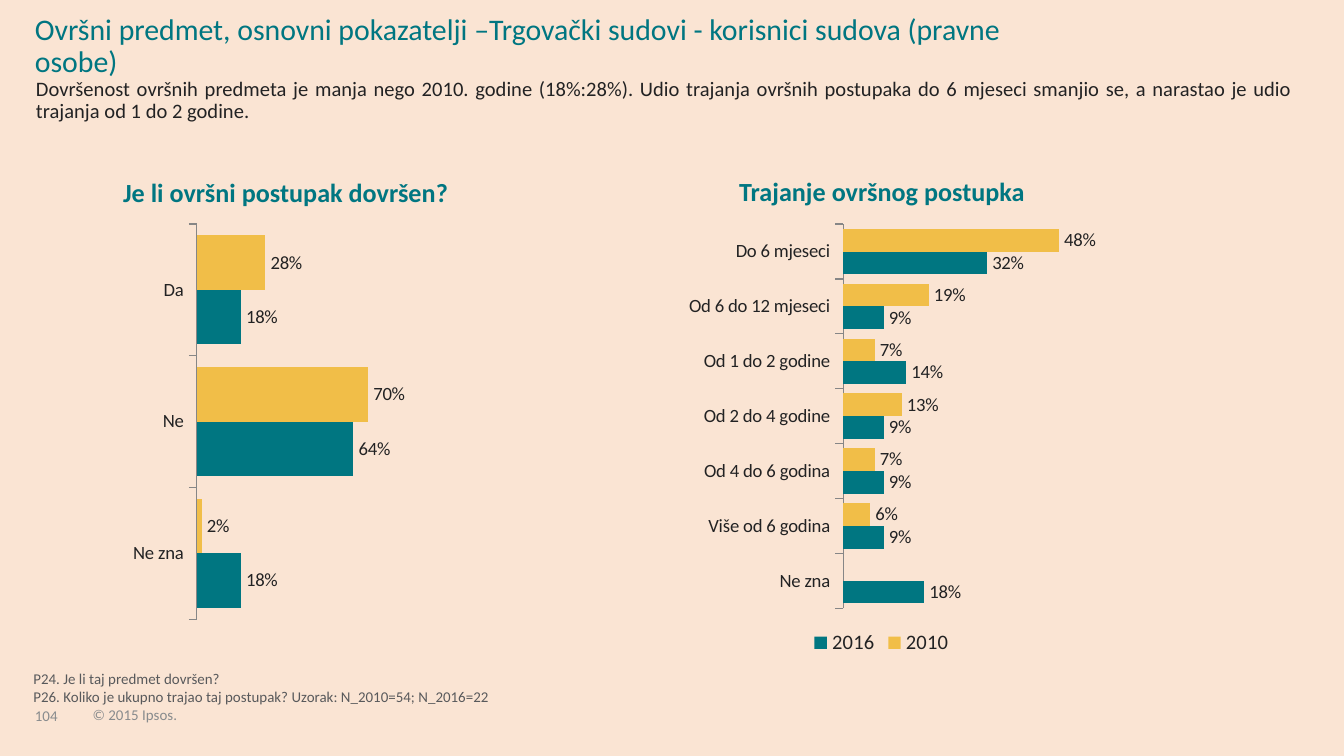
from lxml.etree import SubElement
from pptx import Presentation
from pptx.chart.data import CategoryChartData
from pptx.dml.color import RGBColor
from pptx.enum.chart import XL_CHART_TYPE as ChartType
from pptx.enum.chart import XL_LABEL_POSITION as LabelPos
from pptx.enum.chart import XL_LEGEND_POSITION as LegendPos
from pptx.enum.chart import XL_TICK_LABEL_POSITION as TickLabelPos
from pptx.enum.chart import XL_TICK_MARK as TickMark
from pptx.enum.text import MSO_ANCHOR as Anchor
from pptx.enum.text import MSO_AUTO_SIZE as AutoSize
from pptx.enum.text import PP_ALIGN as Align
from pptx.oxml.ns import qn
from pptx.util import Cm, Pt

FONT = "Calibri"
PEACH = RGBColor(0xFA, 0xE4, 0xD3)
TEAL = RGBColor(0x00, 0x76, 0x81)
YELLOW = RGBColor(0xF1, 0xBE, 0x48)
INK = RGBColor(0x22, 0x22, 0x23)
NOTE_GREY = RGBColor(0x58, 0x59, 0x5B)
FOOTER_GREY = RGBColor(0x88, 0x8B, 0x8D)
AXIS_GREY = RGBColor(0x86, 0x86, 0x86)


def place(shape, left, top, width, height):
    shape.left, shape.top = Cm(left), Cm(top)
    shape.width, shape.height = Cm(width), Cm(height)


def write(shape, lines, size, color, align=Align.LEFT, spacing=1.0,
          anchor=Anchor.TOP, bold=False, insets=(0, 0), wrap=True):
    """Fill a shape with unbulleted paragraphs in one style."""
    frame = shape.text_frame
    frame.auto_size = AutoSize.NONE
    frame.word_wrap = wrap
    frame.vertical_anchor = anchor
    frame.margin_left = frame.margin_right = Cm(insets[0])
    frame.margin_top = frame.margin_bottom = Cm(insets[1])
    for index, line in enumerate(lines):
        para = frame.add_paragraph() if index else frame.paragraphs[0]
        para.alignment = align
        para.line_spacing = spacing
        para.space_before = Pt(0)
        props = para._p.get_or_add_pPr()
        props.set("marL", "0")
        props.set("indent", "0")
        SubElement(props, qn("a:buNone"))
        run = para.add_run()
        run.text = line
        run.font.name = FONT
        run.font.size = Pt(size)
        run.font.bold = bold
        run.font.color.rgb = color


def add_label(slide, box, lines, size, color, **style):
    label = slide.shapes.add_textbox(*map(Cm, box))
    write(label, lines, size, color, **style)


def fix_plot_area(chart, x, y, width, height):
    """Set the inner plot area as fractions of the chart."""
    plot_area = chart._chartSpace.chart.plotArea
    for old in plot_area.findall(qn("c:layout")):
        plot_area.remove(old)
    layout = SubElement(plot_area, qn("c:layout"))
    plot_area.insert(0, layout)
    manual = SubElement(layout, qn("c:manualLayout"))
    settings = {"layoutTarget": "inner", "xMode": "edge", "yMode": "edge",
                "x": x, "y": y, "w": width, "h": height}
    for tag, value in settings.items():
        SubElement(manual, qn(f"c:{tag}")).set("val", str(value))


def add_bar_chart(slide, box, answers, shares, maximum, plot_area, legend=False):
    """Compare the answers of 2010 and 2016."""
    data = CategoryChartData(number_format="0%")
    data.categories = answers
    for year, values in shares.items():
        data.add_series(year, values)
    chart = slide.shapes.add_chart(
        ChartType.BAR_CLUSTERED, *map(Cm, box), data).chart
    chart.has_title = False
    chart.font.name = FONT
    chart.font.size = Pt(10)
    chart.font.color.rgb = INK

    # Axes
    answer_axis, share_axis = chart.category_axis, chart.value_axis
    answer_axis.reverse_order = True
    answer_axis.major_tick_mark = TickMark.OUTSIDE
    answer_axis.tick_label_position = TickLabelPos.LOW
    answer_axis.has_major_gridlines = False
    answer_axis.format.line.color.rgb = AXIS_GREY
    share_axis.minimum_scale = 0
    share_axis.maximum_scale = maximum
    share_axis.has_major_gridlines = False
    share_axis.visible = False

    # Bars and their labels
    plot = chart.plots[0]
    plot.gap_width = 42
    plot.overlap = 0
    plot.vary_by_categories = False
    for series, color in zip(plot.series, (YELLOW, TEAL)):
        series.format.fill.solid()
        series.format.fill.fore_color.rgb = color
        series.invert_if_negative = False
        labels = series.data_labels
        labels.show_value = True
        labels.number_format = "0%"
        labels.number_format_is_linked = False
        labels.position = LabelPos.OUTSIDE_END

    chart.has_legend = legend
    if legend:
        chart.legend.position = LegendPos.BOTTOM
        chart.legend.include_in_layout = False
        chart.legend.font.size = Pt(11)
        chart.legend.font.name = FONT
        chart.legend.font.color.rgb = INK
    fix_plot_area(chart, *plot_area)


def main():
    prs = Presentation()
    prs.slide_width, prs.slide_height = Cm(25.4), Cm(14.28)
    slide = prs.slides.add_slide(prs.slide_layouts[1])
    slide.background.fill.solid()
    slide.background.fill.fore_color.rgb = PEACH

    # Footer
    add_label(slide, (0.66, 13.03, 0.86, 0.66), ["104"], 8, FOOTER_GREY,
              spacing=0.85, anchor=Anchor.BOTTOM, wrap=False)
    add_label(slide, (1.75, 13.21, 1.93, 0.46), ["© 2015 Ipsos."], 8,
              FOOTER_GREY, spacing=0.85, anchor=Anchor.BOTTOM, wrap=False)

    # Title, lead text and question notes
    title, notes = slide.shapes.title, slide.placeholders[1]
    place(title, 0.66, 0.28, 19.71, 1.98)
    write(title, ["Ovršni predmet, osnovni pokazatelji –Trgovački sudovi - "
                  "korisnici sudova (pravne osobe)"], 16, TEAL, spacing=0.9)
    add_label(slide, (0.43, 1.35, 24.26, 1.09),
              ["Dovršenost ovršnih predmeta je manja nego 2010. godine "
               "(18%:28%). Udio trajanja ovršnih postupaka do 6 mjeseci "
               "smanjio se, a narastao je udio trajanja od 1 do 2 godine."],
              11, INK, align=Align.JUSTIFY, spacing=0.9, insets=(0.25, 0.13))
    place(notes, 0.63, 12.47, 20.14, 0.86)
    write(notes, ["P24. Je li taj predmet dovršen?",
                  "P26. Koliko je ukupno trajao taj postupak? "
                  "Uzorak: N_2010=54; N_2016=22"],
          8, NOTE_GREY, anchor=Anchor.BOTTOM)

    # Chart headings
    for left, top, heading in ((2.29, 3.4, "Je li ovršni postupak dovršen?"),
                               (13.56, 3.38, "Trajanje ovršnog postupka")):
        add_label(slide, (left, top, 6.22, 0.64), [heading], 14, TEAL,
                  align=Align.CENTER, spacing=0.9, bold=True, wrap=False)

    # Completion and duration of proceedings
    add_bar_chart(slide, (0.25, 4.22, 8.26, 7.49), ["Da", "Ne", "Ne zna"],
                  {"2010": (0.28, 0.7, 0.02), "2016": (0.18, 0.64, 0.18)},
                  1, (0.42, 0, 0.56, 1))
    add_bar_chart(slide, (12.14, 4.22, 9.04, 8.26),
                  ["Do 6 mjeseci", "Od 6 do 12 mjeseci", "Od 1 do 2 godine",
                   "Od 2 do 4 godine", "Od 4 do 6 godina",
                   "Više od 6 godina", "Ne zna"],
                  {"2010": (0.48, 0.19, 0.07, 0.13, 0.07, 0.06, None),
                   "2016": (0.32, 0.09, 0.14, 0.09, 0.09, 0.09, 0.18)},
                  0.5, (0.42, 0, 0.47, 0.88), legend=True)

    prs.save("out.pptx")


if __name__ == "__main__":
    main()
